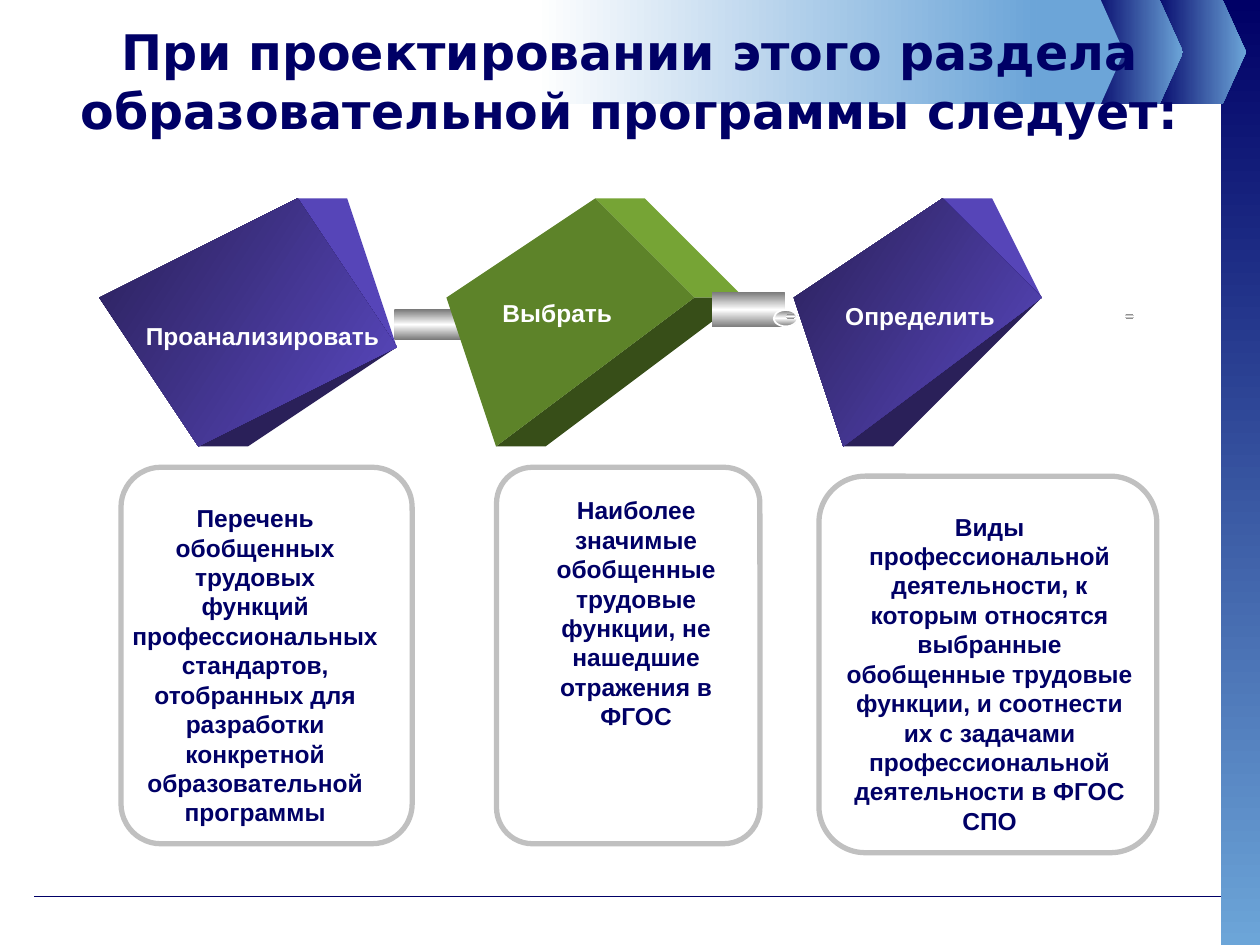
from dataclasses import dataclass

from lxml.etree import SubElement
from pptx import Presentation
from pptx.dml.color import RGBColor
from pptx.enum.shapes import MSO_CONNECTOR, MSO_SHAPE
from pptx.enum.text import MSO_ANCHOR, MSO_AUTO_SIZE, PP_ALIGN
from pptx.oxml.ns import qn
from pptx.util import Cm, Pt

NAVY, SKY, WHITE, SILVER = "000066", "6CA5D8", "FFFFFF", "C0C0C0"
STEEL = ("7A7A7A", WHITE, "7A7A7A")
VIOLET = ("2A2059", "5A49C2")


@dataclass
class Cube:
    front: list[tuple[float, float]]
    face: tuple[str, ...]
    side: str
    base: str


@dataclass
class Tube:
    x: float
    y: float
    w: float
    h: float
    ring_x: float


@dataclass
class Step:
    label: str
    label_at: tuple[float, float, float]
    card: tuple[float, float, float, float]
    text: list[str]
    text_at: tuple[float, float, float, float]


CUBES = [
    Cube([(2.44, 6.27), (5.66, 3.81), (7.62, 6.97), (4.15, 9.29)], VIOLET, "5645B8", "2A2059"),
    Cube([(8.95, 6.07), (12.25, 3.57), (14.01, 6.43), (10.48, 8.83)], ("5D8329",), "76A435", "374E18"),
    Cube([(15.66, 6.25), (18.91, 3.81), (20.56, 6.49), (17.14, 8.83)], VIOLET, "5645B8", "2A2059"),
]
TUBES = [Tube(7.95, 6.24, 1.98, 0.61, 9.68), Tube(14.35, 5.89, 1.47, 0.71, 15.6)]
STEPS = [
    Step("Проанализировать", (2.69, 6.35, 5.3), (2.44, 9.42, 5.87, 7.59),
         ["Перечень", "обобщенных", "трудовых", "функций", "профессиональных",
          "стандартов,", "отобранных для", "разработки", "конкретной",
          "образовательной", "программы"], (2.39, 10.02, 5.51, 6.85)),
    Step("Выбрать", (9.88, 5.89, 2.74), (10.01, 9.42, 5.31, 7.59),
         ["Наиболее значимые обобщенные трудовые функции, не нашедшие отражения в ФГОС"],
         (10.74, 9.86, 4.17, 5.05)),
    Step("Определить", (16.79, 5.94, 3.56), (16.51, 9.6, 6.81, 7.59),
         ["Виды профессиональной деятельности, к которым относятся выбранные обобщенные "
          "трудовые функции, и соотнести их с задачами профессиональной деятельности "
          "в ФГОС СПО"], (16.79, 10.19, 6.32, 6.83)),
]


def rgb(color: str) -> RGBColor:
    return RGBColor.from_string(color)


def paint(sp, colors=(), angle: int = 0, line: str = "", width: float = 1) -> None:
    sp.shadow.inherit = False
    if not colors:
        sp.fill.background()
    elif len(colors) == 1:
        sp.fill.solid()
        sp.fill.fore_color.rgb = rgb(colors[0])
    else:
        sp.fill.gradient()
        sp.fill.gradient_angle = -angle % 360
        stops = sp.element.spPr.find(".//" + qn("a:gsLst"))
        for stop in list(stops):
            stops.remove(stop)
        for i, color in enumerate(colors):
            gs = SubElement(stops, qn("a:gs"), pos=str(100000 * i // (len(colors) - 1)))
            SubElement(gs, qn("a:srgbClr"), val=color)
    if line:
        sp.line.color.rgb = rgb(line)
        sp.line.width = Pt(width)
    else:
        sp.line.fill.background()


def add_preset(s, kind, x: float, y: float, w: float, h: float, **look):
    sp = s.shapes.add_shape(kind, Cm(x), Cm(y), Cm(w), Cm(h))
    paint(sp, **look)
    return sp


def add_face(s, points: list[tuple[float, float]], **look) -> None:
    builder = s.shapes.build_freeform(*points[0], scale=Cm(1))
    builder.add_line_segments(points[1:])
    paint(builder.convert_to_shape(), **look)


def add_cube(s, cube: Cube) -> None:
    left, top, right, bottom = cube.front
    back_top = (top[0] + 0.89, top[1] + 0.22)
    back_right = (right[0] + 0.77, right[1])
    back_bottom = (bottom[0] + 1, bottom[1] - 0.2)
    add_face(s, [top, back_top, back_right, right], colors=(cube.side,))
    add_face(s, [bottom, right, back_right, back_bottom], colors=(cube.base,))
    add_face(s, cube.front, colors=cube.face, angle=33)


def add_tube(s, tube: Tube) -> None:
    add_preset(s, MSO_SHAPE.RECTANGLE, tube.x, tube.y, tube.w, tube.h, colors=STEEL, angle=90)
    add_preset(s, MSO_SHAPE.OVAL, tube.ring_x, 6.25, 0.48, 0.33,
               colors=STEEL, angle=90, line=WHITE)
    add_dot(s, tube.ring_x + 0.25)


def add_dot(s, x: float) -> None:
    add_preset(s, MSO_SHAPE.OVAL, x, 6.33, 0.18, 0.1, colors=STEEL, angle=90)


def set_text(tf, lines: list[str], *, color: str = NAVY, size: float = 14,
             font: str = "Arial", align=PP_ALIGN.CENTER, wrap: bool = True,
             anchor=MSO_ANCHOR.TOP) -> None:
    tf.word_wrap = wrap
    tf.auto_size = MSO_AUTO_SIZE.NONE
    tf.vertical_anchor = anchor
    for i, line in enumerate(lines):
        p = tf.add_paragraph() if i else tf.paragraphs[0]
        p.alignment = align
        r = p.add_run()
        r.text = line
        r.font.name = font
        r.font.size = Pt(size)
        r.font.bold = True
        r.font.color.rgb = rgb(color)


def add_text(s, x: float, y: float, w: float, h: float, lines: list[str], **look) -> None:
    set_text(s.shapes.add_textbox(Cm(x), Cm(y), Cm(w), Cm(h)).text_frame, lines, **look)


def add_frame(s) -> None:
    rule = s.shapes.add_connector(MSO_CONNECTOR.STRAIGHT, Cm(0.69), Cm(18.08), Cm(24.61), Cm(18.08))
    rule.line.color.rgb = rgb(NAVY)
    rule.line.width = Pt(0.75)
    SubElement(rule.element.spPr, qn("a:effectLst"))
    add_preset(s, MSO_SHAPE.RECTANGLE, 24.61, 0, 0.79, 19.05, colors=(NAVY, SKY), angle=90)
    for x, w, colors in [(23.22, 1.9, (NAVY, SKY)), (21.95, 1.9, (NAVY, SKY)),
                         (20.78, 1.88, (SKY,))]:
        arrow = add_preset(s, MSO_SHAPE.PENTAGON, x, 0, w, 2.1, colors=colors)
        arrow.adjustments[0] = 0.25
    add_preset(s, MSO_SHAPE.RECTANGLE, 10.8, 0, 10.1, 2.1, colors=(WHITE, SKY))


def add_title(s, text: str) -> None:
    title = s.shapes.title
    title.left, title.top, title.width, title.height = Cm(1.27), Cm(0.33), Cm(22.83), Cm(2.57)
    set_text(title.text_frame, [text], size=28, font="DejaVu Sans", anchor=MSO_ANCHOR.MIDDLE)
    title.element.getparent().append(title.element)


def main() -> None:
    prs = Presentation()
    prs.slide_width, prs.slide_height = Cm(25.4), Cm(19.05)
    s = prs.slides.add_slide(prs.slide_layouts[5])
    add_frame(s)
    add_title(s, "При проектировании этого раздела образовательной программы следует:")
    for step in STEPS:
        card = add_preset(s, MSO_SHAPE.ROUNDED_RECTANGLE, *step.card, line=SILVER, width=3)
        card.adjustments[0] = 0.137
    for i, cube in enumerate(CUBES):
        add_cube(s, cube)
        if i < len(TUBES):
            add_tube(s, TUBES[i])
    add_dot(s, 22.68)
    for step in STEPS:
        add_text(s, *step.label_at, 0.86, [step.label],
                 color=WHITE, align=PP_ALIGN.LEFT, wrap=False)
        add_text(s, *step.text_at, step.text)
    prs.save("out.pptx")


if __name__ == "__main__":
    main()
